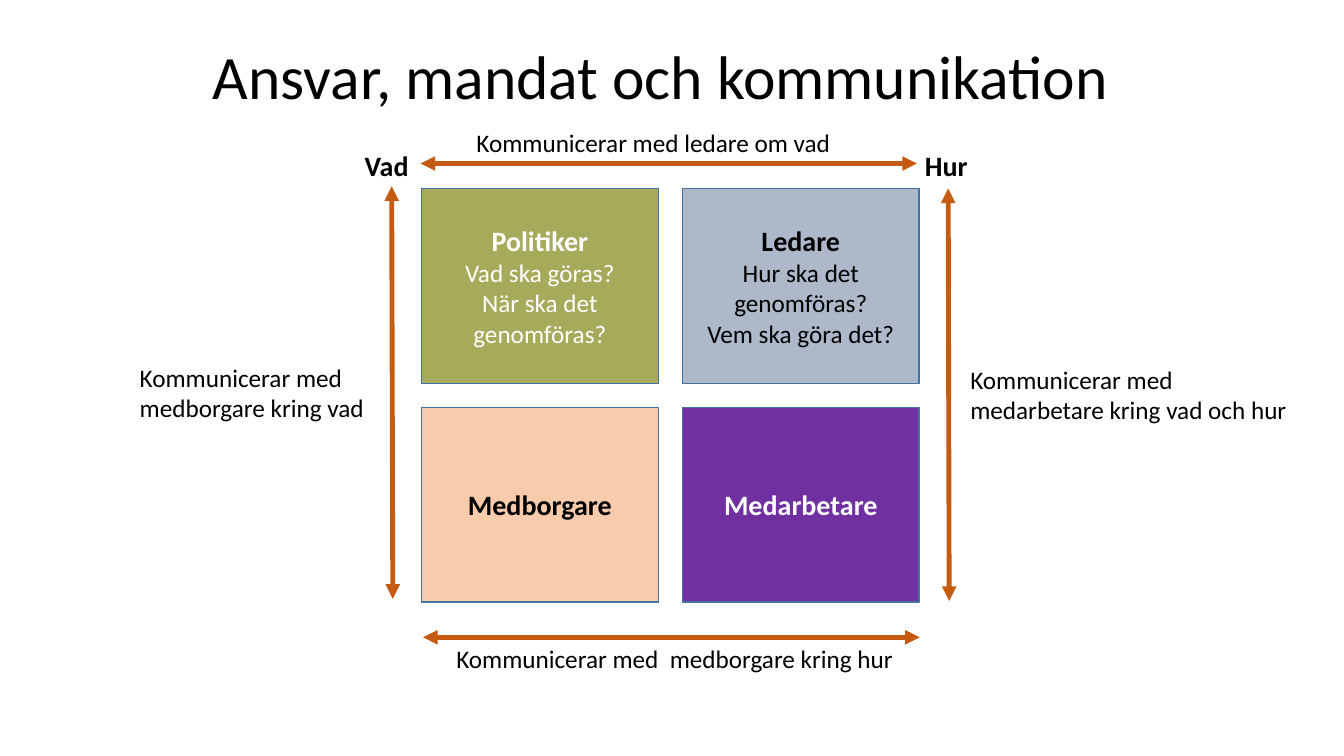
import pptx
import pptx.util
import pptx.dml.color
import pptx.enum.shapes
import pptx.enum.text
import pptx.oxml.ns
import lxml.etree

Pt = pptx.util.Pt
RGBColor = pptx.dml.color.RGBColor
ALIGN = pptx.enum.text.PP_ALIGN
ANCHOR = pptx.enum.text.MSO_ANCHOR

BLACK = RGBColor(0x00, 0x00, 0x00)
WHITE = RGBColor(0xFF, 0xFF, 0xFF)
OLIVE = RGBColor(0xA6, 0xAB, 0x5C)
GREY_BLUE = RGBColor(0xAD, 0xB9, 0xCA)
PEACH = RGBColor(0xF8, 0xCB, 0xAD)
PURPLE = RGBColor(0x70, 0x30, 0xA0)
OUTLINE = RGBColor(0x43, 0x73, 0x9E)
ORANGE = RGBColor(0xC5, 0x5A, 0x11)


class Slide:
    font = "Calibri"
    title_size, heading_size, body_size = 44, 20, 18

    def __init__(self, deck):
        self.page = deck.slides.add_slide(deck.slide_layouts[5])

    def add_lines(self, frame, lines, color=BLACK, align=ALIGN.LEFT):
        for index, (text, size, bold) in enumerate(lines):
            para = frame.paragraphs[0] if index == 0 else frame.add_paragraph()
            para.alignment = align
            span = para.add_run()
            span.text = text
            span.font.name = self.font
            span.font.size = Pt(size)
            span.font.bold = bold
            span.font.color.rgb = color

    def title(self, text, left, top, width, height):
        box = self.page.shapes.title
        box.left, box.top, box.width, box.height = Pt(left), Pt(top), Pt(width), Pt(height)
        box.text_frame.vertical_anchor = ANCHOR.MIDDLE
        self.add_lines(box.text_frame, [(text, self.title_size, False)])

    def role(self, heading, details, left, top, width, height, fill, color):
        box = self.page.shapes.add_shape(
            pptx.enum.shapes.MSO_SHAPE.RECTANGLE, Pt(left), Pt(top), Pt(width), Pt(height))
        box.shadow.inherit = False
        box.fill.solid()
        box.fill.fore_color.rgb = fill
        box.line.color.rgb = OUTLINE
        box.line.width = Pt(1)
        box.text_frame.word_wrap = True
        box.text_frame.vertical_anchor = ANCHOR.MIDDLE
        lines = [(heading, self.heading_size, True)]
        lines += [(detail, self.body_size, False) for detail in details]
        self.add_lines(box.text_frame, lines, color, ALIGN.CENTER)

    def label(self, texts, left, top, width, height, heading=False):
        box = self.page.shapes.add_textbox(Pt(left), Pt(top), Pt(width), Pt(height))
        box.text_frame.word_wrap = False
        box.text_frame.auto_size = pptx.enum.text.MSO_AUTO_SIZE.SHAPE_TO_FIT_TEXT
        size = self.heading_size if heading else self.body_size
        self.add_lines(box.text_frame, [(text, size, heading) for text in texts])

    def double_arrow(self, x1, y1, x2, y2):
        arrow = self.page.shapes.add_connector(
            pptx.enum.shapes.MSO_CONNECTOR.STRAIGHT, Pt(x1), Pt(y1), Pt(x2), Pt(y2))
        arrow.line.color.rgb = ORANGE
        arrow.line.width = Pt(3.5)
        properties = arrow._element.spPr
        outline = properties.find(pptx.oxml.ns.qn("a:ln"))
        for end in ("a:headEnd", "a:tailEnd"):
            lxml.etree.SubElement(outline, pptx.oxml.ns.qn(end), type="triangle")
        lxml.etree.SubElement(properties, pptx.oxml.ns.qn("a:effectLst"))


def main():
    deck = pptx.Presentation()
    deck.slide_width, deck.slide_height = Pt(960), Pt(540)
    slide = Slide(deck)
    slide.title("Ansvar, mandat och kommunikation", 144.7, 1.5, 676.8, 104.4)

    grid_left, grid_top, width, height, gap = 301, 134.8, 169.2, 139, 17.2
    roles = [
        ("Politiker", ["Vad ska göras?", "När ska det genomföras?"], OLIVE, WHITE),
        ("Ledare", ["Hur ska det genomföras?", "Vem ska göra det?"], GREY_BLUE, BLACK),
        ("Medborgare", [], PEACH, BLACK),
        ("Medarbetare", [], PURPLE, WHITE),
    ]
    for index, (heading, details, fill, color) in enumerate(roles):
        row, column = divmod(index, 2)
        slide.role(heading, details, grid_left + column * (width + gap),
                   grid_top + row * (height + gap), width, height, fill, color)

    for ends in [
        (677.3, 134.6, 678, 429.3),
        (279.8, 133, 280.6, 427.8),
        (655, 116.8, 300.4, 116.8),
        (657, 455.2, 302.2, 455.2),
    ]:
        slide.double_arrow(*ends)

    slide.label(["Kommunicerar med", "medborgare kring vad"], 92.7, 255, 176.4, 51)
    slide.label(["Kommunicerar med", "medarbetare kring vad och hur"], 686, 256.4, 243.4, 51)
    slide.label(["Kommunicerar med ledare om vad"], 333.2, 87.1, 270, 29)
    slide.label(["Kommunicerar med  medborgare kring hur"], 318.8, 455.8, 339, 29)
    slide.label(["Vad"], 253.4, 102.4, 46, 31.5, heading=True)
    slide.label(["Hur"], 653.6, 102.4, 45.4, 31.5, heading=True)
    deck.save("out.pptx")


if __name__ == "__main__":
    main()
